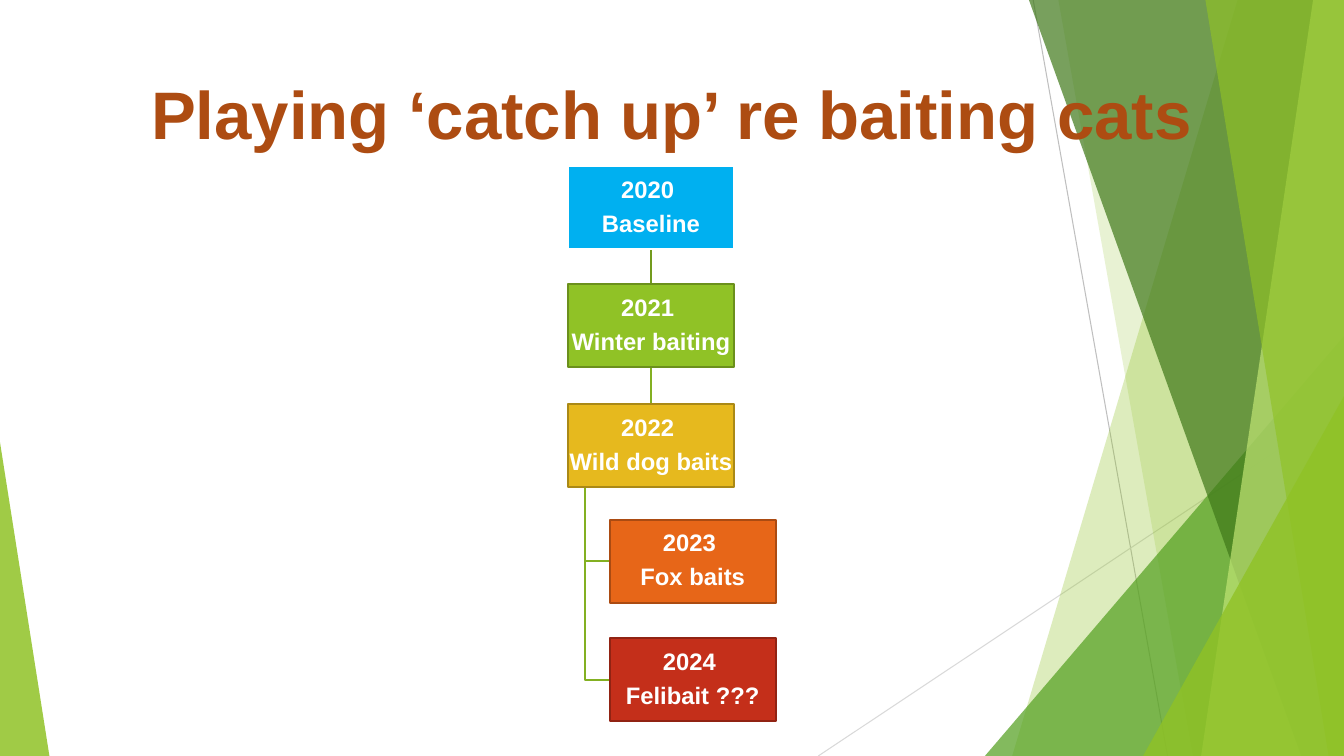
"""Build the cat baiting timeline slide."""
from lxml import etree
from pptx import Presentation
from pptx.dml.color import RGBColor
from pptx.enum import shapes, text
from pptx.oxml import ns
from pptx.util import Pt

COLOURS = {
    "white": "FFFFFF", "title": "AD4C12", "grey": "BFBFBF", "pale grey": "D9D9D9",
    "green": "90C226", "mid green": "54A021", "dark green": "3F7819", "light green": "C0E474",
    "link": "83B022", "first link": "739B1E",
    "blue": "00B0F0", "green edge": "6B901C", "gold": "E6B91E", "gold edge": "AA8916",
    "orange": "E76618", "orange edge": "AB4B12", "red": "C42F1A", "red edge": "912313",
}
WIDTH, HEIGHT = 960, 540


def colour(name):
    return RGBColor.from_string(COLOURS[name])


def write(frame, content, size, ink, anchor, inset, spacing=1.0, after=0):
    frame.word_wrap = True
    frame.auto_size = text.MSO_AUTO_SIZE.NONE
    frame.vertical_anchor = anchor
    frame.margin_left = frame.margin_right = Pt(inset[0])
    frame.margin_top = frame.margin_bottom = Pt(inset[1])
    for index, line in enumerate(content.split("\n")):
        para = frame.add_paragraph() if index else frame.paragraphs[0]
        para.alignment = text.PP_ALIGN.CENTER
        para.line_spacing = spacing
        para.space_before, para.space_after = Pt(0), Pt(after)
        span = para.add_run()
        span.text = line
        span.font.name, span.font.size, span.font.bold = "Arial", Pt(size), True
        span.font.color.rgb = colour(ink)


deck = Presentation()
deck.slide_width, deck.slide_height = Pt(WIDTH), Pt(HEIGHT)
page = deck.slides.add_slide(deck.slide_layouts[5])

box_w, box_h = 118.5, 59.2
main_x, side_x = 405.8, 435.6
centre_x, trunk_x = main_x + box_w / 2, 417.8
steps = [
    ("2020 \nBaseline", main_x, 118.6, "blue", "white"),
    ("2021 \nWinter baiting", main_x, 203, "green", "green edge"),
    ("2022 \nWild dog baits", main_x, 288.8, "gold", "gold edge"),
    ("2023 \nFox baits", side_x, 371.3, "orange", "orange edge"),
    ("2024 \nFelibait ???", side_x, 455.8, "red", "red edge"),
]
tops = [step[2] for step in steps]

straight_lines = [
    (738, 0, 834, HEIGHT, "grey", 0.75),
    (WIDTH, 290, 584.5, HEIGHT, "pale grey", 0.75),
    (centre_x, tops[1] + box_h, centre_x, tops[2], "link", 1.5),
    (centre_x, tops[0] + box_h, centre_x, tops[1], "first link", 1.5),
]
for x1, y1, x2, y2, ink, weight in straight_lines:
    line = page.shapes.add_connector(
        shapes.MSO_CONNECTOR.STRAIGHT, Pt(x1), Pt(y1), Pt(x2), Pt(y2))
    line.line.color.rgb = colour(ink)
    line.line.width = Pt(weight)
    etree.SubElement(line.element.spPr, ns.qn("a:effectLst"))

facets = [
    ("band", (884, 723), "green", 30),
    ("band", (756, 852), "green", 20),
    ("triangle", (703.5, 240, WIDTH, 1), "mid green", 72),
    ("band", (735, 929.5), "dark green", 70),
    ("band", (938, 858), "light green", 70),
    ("band", (861, 949), "green", 65),
    ("triangle", (816.5, 283, WIDTH, 1), "green", 80),
    ("triangle", (0, 316, 35.3, 0), "green", 85),
]
for kind, place, fill, opacity in facets:
    if kind == "band":
        top_x, bottom_x = place
        outline = page.shapes.build_freeform(Pt(top_x), Pt(0))
        outline.add_line_segments(
            [(Pt(WIDTH), Pt(0)), (Pt(WIDTH), Pt(HEIGHT)), (Pt(bottom_x), Pt(HEIGHT))])
        facet = outline.convert_to_shape()
    else:
        left, top, right, peak = place
        facet = page.shapes.add_shape(
            shapes.MSO_SHAPE.ISOSCELES_TRIANGLE,
            Pt(left), Pt(top), Pt(right - left), Pt(HEIGHT - top))
        facet.adjustments[0] = peak
    facet.shadow.inherit = False
    facet.line.fill.background()
    facet.fill.solid()
    facet.fill.fore_color.rgb = colour(fill)
    tint = facet.element.spPr.find(".//" + ns.qn("a:srgbClr"))
    etree.SubElement(tint, ns.qn("a:alpha"), val=str(opacity * 1000))

title = page.shapes.title
page.shapes.element.append(title.element)
title.left, title.top, title.width, title.height = Pt(0), Pt(48), Pt(WIDTH), Pt(106)
write(title.text_frame, "Playing ‘catch up’ re baiting cats", size=48, ink="title",
      anchor=text.MSO_ANCHOR.TOP, inset=(7.2, 3.6))

for top in tops[:2:-1]:
    middle = top + box_h / 2
    outline = page.shapes.build_freeform(Pt(trunk_x), Pt(tops[2] + box_h))
    outline.add_line_segments(
        [(Pt(trunk_x), Pt(middle)), (Pt(side_x), Pt(middle))], close=False)
    branch = outline.convert_to_shape()
    branch.shadow.inherit = False
    branch.fill.background()
    branch.line.color.rgb = colour("link")
    branch.line.width = Pt(1.5)

for label, left, top, fill, edge in steps:
    box = page.shapes.add_shape(
        shapes.MSO_SHAPE.RECTANGLE, Pt(left), Pt(top), Pt(box_w), Pt(box_h))
    box.shadow.inherit = False
    box.fill.solid()
    box.fill.fore_color.rgb = colour(fill)
    box.line.color.rgb = colour(edge)
    box.line.width = Pt(1.5)
    write(box.text_frame, label, size=17, ink="white", anchor=text.MSO_ANCHOR.MIDDLE,
          inset=(0.8, 0.8), spacing=0.9, after=6)

deck.save("out.pptx")
